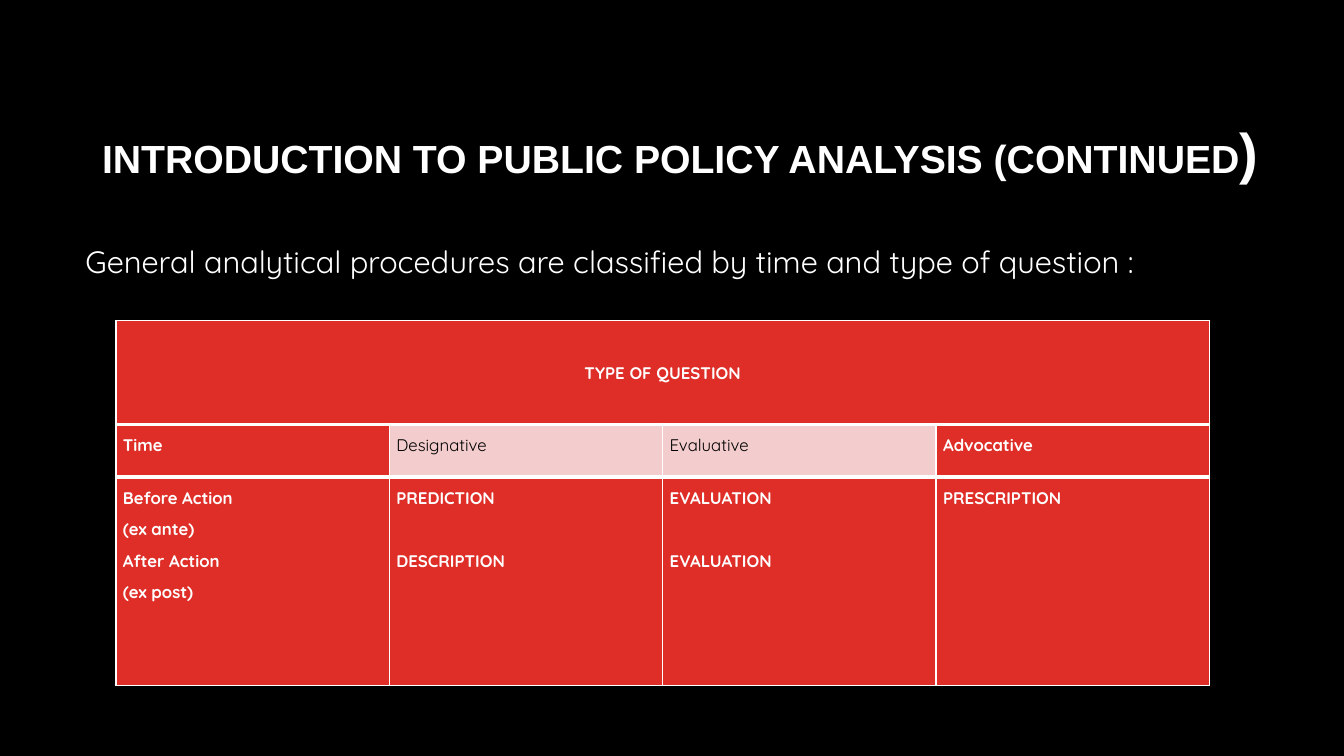
from lxml import etree
from pptx import Presentation
from pptx.dml.color import RGBColor
from pptx.enum.text import MSO_ANCHOR, PP_ALIGN
from pptx.oxml.ns import qn
from pptx.util import Pt

BLACK = RGBColor(0x00, 0x00, 0x00)
WHITE = RGBColor(0xFF, 0xFF, 0xFF)
RED = RGBColor(0xDF, 0x2E, 0x28)
PINK = RGBColor(0xF3, 0xCD, 0xCD)
LEFT, RIGHT = PP_ALIGN.LEFT, PP_ALIGN.RIGHT
CENTER, JUSTIFY = PP_ALIGN.CENTER, PP_ALIGN.JUSTIFY
TOP, MIDDLE = MSO_ANCHOR.TOP, MSO_ANCHOR.MIDDLE

LINE = 22.5  # one table text line, in points
HEAD = "TYPE OF QUESTION"
KINDS = ["Time", "Designative", "Evaluative", "Advocative"]
# Each entry is a text and the space before it
STEPS = [
    [("Before Action", 0), ("(ex ante)", 0), ("After Action", 0), ("(ex post)", 0)],
    [("PREDICTION", 0), ("DESCRIPTION", LINE)],
    [("EVALUATION", 0), ("EVALUATION", LINE)],
    [("PRESCRIPTION", 0)],
]


class Deck:
    title = dict(name="Arial", size=Pt(28), bold=True)
    lead = dict(name="Quicksand", size=Pt(22), bold=False)
    strong = dict(name="Quicksand", size=Pt(12), bold=True)
    plain = dict(strong, bold=False)

    def __init__(self, slide):
        self.slide = slide
        fill = slide.background.fill
        fill.solid()
        fill.fore_color.rgb = BLACK

    def run(self, para, text, style, color=WHITE):
        run = para.add_run()
        run.text = text
        for key, value in style.items():
            setattr(run.font, key, value)
        run.font.color.rgb = color

    def text(self, box, runs, align=LEFT, anchor=TOP):
        frame = self.slide.shapes.add_textbox(*map(Pt, box)).text_frame
        frame.word_wrap = True
        frame.vertical_anchor = anchor
        para = frame.paragraphs[0]
        para.alignment = align
        para.line_spacing = 0.9
        for text, style in runs:
            self.run(para, text, style)

    def table(self, box, rows, cols):
        x, y, width = box
        shape = self.slide.shapes.add_table(
            len(rows), cols, Pt(x), Pt(y), Pt(width), Pt(sum(rows)))
        table = shape.table
        table.first_row = table.horz_banding = False
        for col in table.columns:
            col.width = Pt(width / cols)
        for row, height in zip(table.rows, rows):
            row.height = Pt(height)
        return table

    def edges(self, cell, top, bottom):
        props = cell._tc.get_or_add_tcPr()
        for side, width in dict(L=1, R=1, T=top, B=bottom).items():
            line = etree.SubElement(props, qn(f"a:ln{side}"), w=str(Pt(width)))
            fill = etree.SubElement(line, qn("a:solidFill"))
            etree.SubElement(fill, qn("a:srgbClr"), val=str(WHITE))

    def cell(self, cell, lines, fill=RED, style=strong, color=WHITE,
             align=JUSTIFY, inset=0, top=3, bottom=3):
        self.edges(cell, top, bottom)
        cell.fill.solid()
        cell.fill.fore_color.rgb = fill
        cell.margin_left = cell.margin_right = Pt(5)
        cell.margin_top, cell.margin_bottom = Pt(inset), Pt(0)
        frame = cell.text_frame
        for i, (text, gap) in enumerate(lines):
            para = frame.add_paragraph() if i else frame.paragraphs[0]
            para.alignment = align
            para.line_spacing = 1.5
            if gap:
                para.space_before = Pt(gap)
            self.run(para, text, style, color)


def main():
    prs = Presentation()
    prs.slide_width, prs.slide_height = Pt(960), Pt(540)
    deck = Deck(prs.slides.add_slide(prs.slide_layouts[6]))

    # Title and lead sentence
    deck.text((62.6, 60.5, 843.1, 101.5),
              [("INTRODUCTION TO PUBLIC POLICY ANALYSIS (CONTINUED", deck.title),
               (")", dict(deck.title, size=Pt(40)))], RIGHT, MIDDLE)
    deck.text((54, 172.8, 851.8, 316.8),
              [("General analytical procedures are classified by time "
                "and type of question :", deck.lead)])

    # Table heading across all columns
    table = deck.table((82.8, 229, 781.2), [74.2, 37.4, 149], len(KINDS))
    table.cell(0, 0).merge(table.cell(0, len(KINDS) - 1))
    for col in range(len(KINDS)):
        lines = [] if col else [(HEAD, 0)]
        deck.cell(table.cell(0, col), lines, align=CENTER, inset=LINE, top=1)

    # Question types and procedures
    soft = dict(fill=PINK, style=deck.plain, color=BLACK)
    for col, (kind, steps) in enumerate(zip(KINDS, STEPS)):
        look = soft if col in (1, 2) else {}
        deck.cell(table.cell(1, col), [(kind, 0)], **look)
        deck.cell(table.cell(2, col), steps, bottom=1)

    prs.save("out.pptx")


if __name__ == "__main__":
    main()
